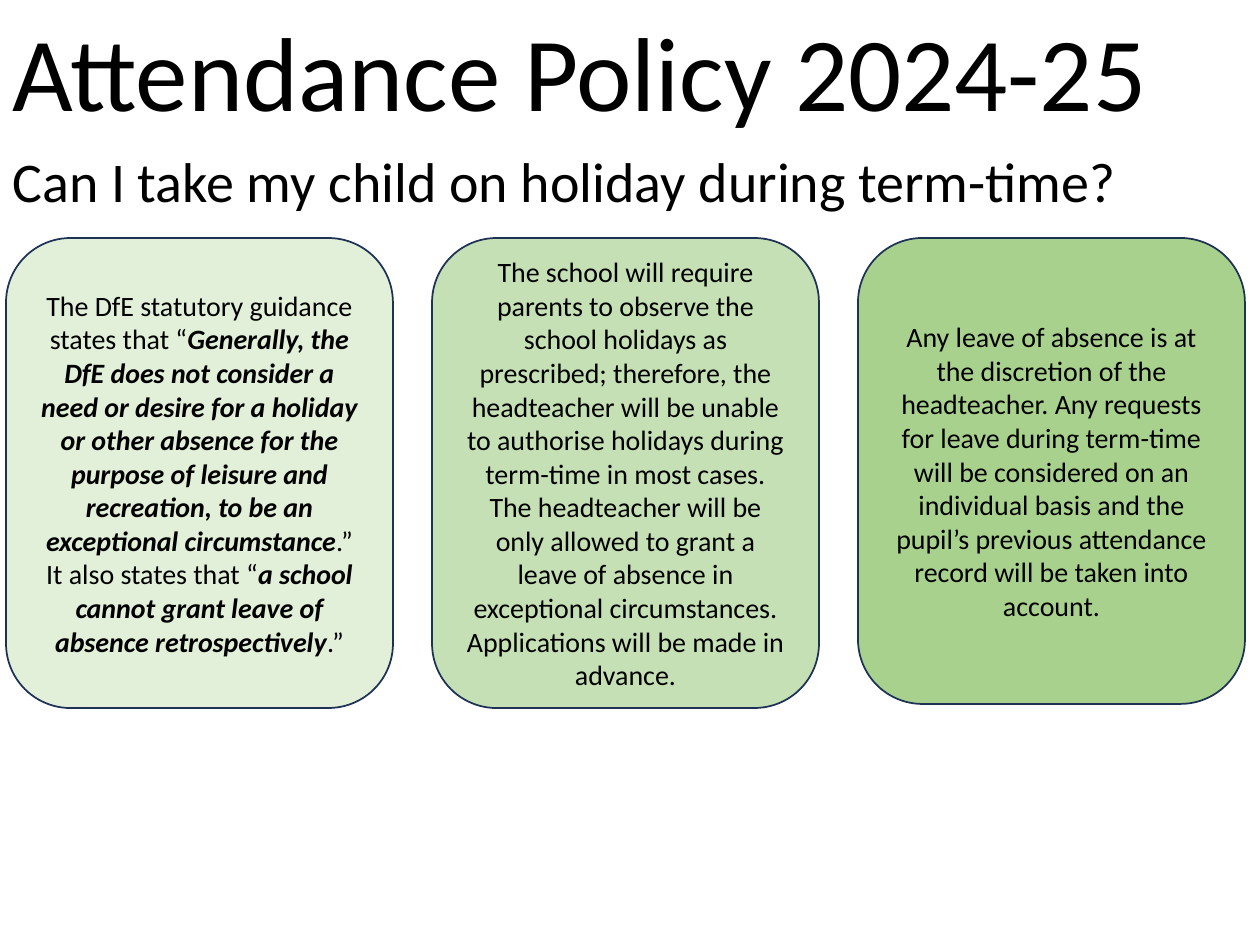
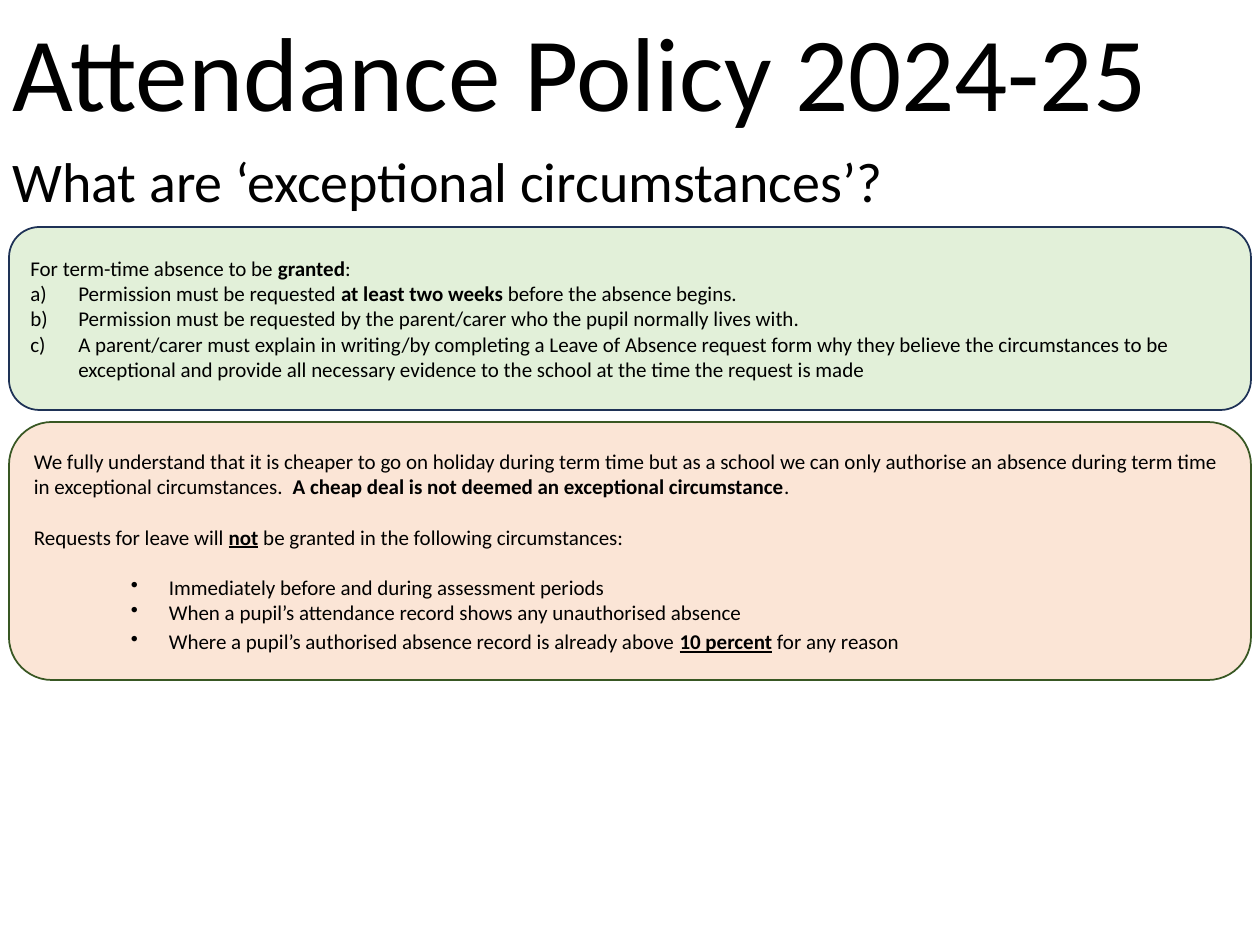
from pptx import Presentation
from pptx import util as u
from pptx.dml import color
from pptx.enum import shapes, text
from pptx.oxml import ns
from lxml import etree

PX = 914400 / 126
FONT = "Calibri"
COLOURS = {
    "ink": "000000",
    "navy": "1E3256",
    "forest": "385723",
    "pale_green": "E2F0D9",
    "light_green": "C5E0B4",
    "mid_green": "A9D18E",
    "peach": "FBE5D6",
}

STRONG = {"bold": True}
QUOTE = {"bold": True, "italic": True}
STRESS = {"bold": True, "underline": True}
LETTERED = {"marker": ("buAutoNum", "type", "alphaLcParenR"), "margin": 48, "indent": -48}
BULLETED = {"marker": ("buChar", "char", "•"), "margin": 135, "indent": -38}

CARDS = [
    ("pale_green", 470, [
        "The DfE statutory guidance states that “",
        ("Generally, the DfE does not consider a need or desire for a holiday or other "
         "absence for the purpose of leisure and recreation, to be an exceptional "
         "circumstance", QUOTE),
        ".” It also states that “",
        ("a school cannot grant leave of absence retrospectively", QUOTE),
        ".”",
    ]),
    ("light_green", 470, [
        "The school will require parents to observe the school holidays as prescribed; "
        "therefore, the headteacher will be unable to authorise holidays during term-time "
        "in most cases. The headteacher will be only allowed to grant a leave of absence in "
        "exceptional circumstances. Applications will be made in advance.",
    ]),
    ("mid_green", 466, [
        "Any leave of absence is at the discretion of the headteacher. Any requests for "
        "leave during term-time will be considered on an individual basis and the pupil’s "
        "previous attendance record will be taken into account.",
    ]),
]

GRANTED = [
    (["For term-time absence to be ", ("granted", STRONG), ":"], {}),
    (["Permission must be requested ", ("at least two weeks", STRONG),
      " before the absence begins."], LETTERED),
    (["Permission must be requested by the parent/carer who the pupil normally lives with."],
     LETTERED),
    (["A parent/carer must explain in writing/by completing a Leave of Absence request form "
      "why they believe the circumstances to be exceptional and provide all necessary "
      "evidence to the school at the time the request is made"], LETTERED),
]

REFUSED = [
    (["We fully understand that it is cheaper to go on holiday during term time but as a "
      "school we can only authorise an absence during term time in exceptional "
      "circumstances.  ",
      ("A cheap deal is not deemed an exceptional circumstance", STRONG), "."], {}),
    (["Requests for leave will ", ("not", STRESS),
      " be granted in the following circumstances:"], {"before": 14.6}),
    (["Immediately before and during assessment periods"], {**BULLETED, "before": 14.6}),
    (["When a pupil’s attendance record shows any unauthorised absence"], BULLETED),
    (["Where a pupil’s authorised absence record is already above ",
      ("10 percent", STRESS), " for any reason"], {**BULLETED, "before": 2}),
]


def px(length):
    return u.Emu(round(length * PX))


def rgb(name):
    return color.RGBColor.from_string(COLOURS[name])


def add_text(para, words, size, bold=False, italic=False, underline=False):
    span = para.add_run()
    span.text = words
    font = span.font
    font.name, font.size = FONT, u.Pt(size)
    font.bold, font.italic, font.underline = bold, italic, underline
    font.color.rgb = rgb("ink")


def add_marker(para, marker, margin, indent):
    tag, attribute, value = marker
    properties = para._p.get_or_add_pPr()
    properties.set("marL", str(px(margin)))
    properties.set("indent", str(px(indent)))
    etree.SubElement(properties, ns.qn("a:" + tag)).set(attribute, value)


def fill_paragraph(para, spans, size, align=text.PP_ALIGN.LEFT, before=0,
                   marker=None, margin=0, indent=0):
    if marker:
        add_marker(para, marker, margin, indent)
    para.alignment = align
    if before:
        para.space_before = u.Pt(before)
    for span in spans:
        words, style = (span, {}) if isinstance(span, str) else span
        add_text(para, words, size, **style)


def add_heading(page, words, top, width, height, size):
    box = page.shapes.add_textbox(0, px(top), px(width), px(height))
    box.text_frame.word_wrap = False
    box.text_frame.auto_size = text.MSO_AUTO_SIZE.SHAPE_TO_FIT_TEXT
    fill_paragraph(box.text_frame.paragraphs[0], [words], size)


def add_panel(page, left, top, width, height, fill, paragraphs, size, line="navy"):
    box = page.shapes.add_shape(shapes.MSO_SHAPE.ROUNDED_RECTANGLE,
                                px(left), px(top), px(width), px(height))
    box.shadow.inherit = False
    box.fill.solid()
    box.fill.fore_color.rgb = rgb(fill)
    box.line.color.rgb = rgb(line)
    box.line.width = u.Pt(1)
    frame = box.text_frame
    frame.word_wrap = True
    frame.vertical_anchor = text.MSO_ANCHOR.MIDDLE
    for index, (spans, layout) in enumerate(paragraphs):
        para = frame.add_paragraph() if index else frame.paragraphs[0]
        fill_paragraph(para, spans, size, **layout)


def add_page(deck, question, question_width):
    page = deck.slides.add_slide(deck.slide_layouts[6])
    add_heading(page, "Attendance Policy 2024-25", 0, 1173, 140, 60)
    add_heading(page, question, 140, question_width, 81, 32)
    return page


def main():
    deck = Presentation()
    deck.slide_width, deck.slide_height = px(1260), px(945)

    holiday = add_page(deck, "Can I take my child on holiday during term-time?", 1143)
    centred = {"align": text.PP_ALIGN.CENTER}
    for column, (fill, height, spans) in enumerate(CARDS):
        add_panel(holiday, 6 + 426 * column, 238, 387, height, fill, [(spans, centred)], 16)

    exceptional = add_page(deck, "What are ‘exceptional circumstances’?", 903)
    add_panel(exceptional, 9, 227, 1242, 183, "pale_green", GRANTED, 12)
    add_panel(exceptional, 9, 422, 1242, 258, "peach", REFUSED, 12, line="forest")

    deck.save("out.pptx")


if __name__ == "__main__":
    main()
